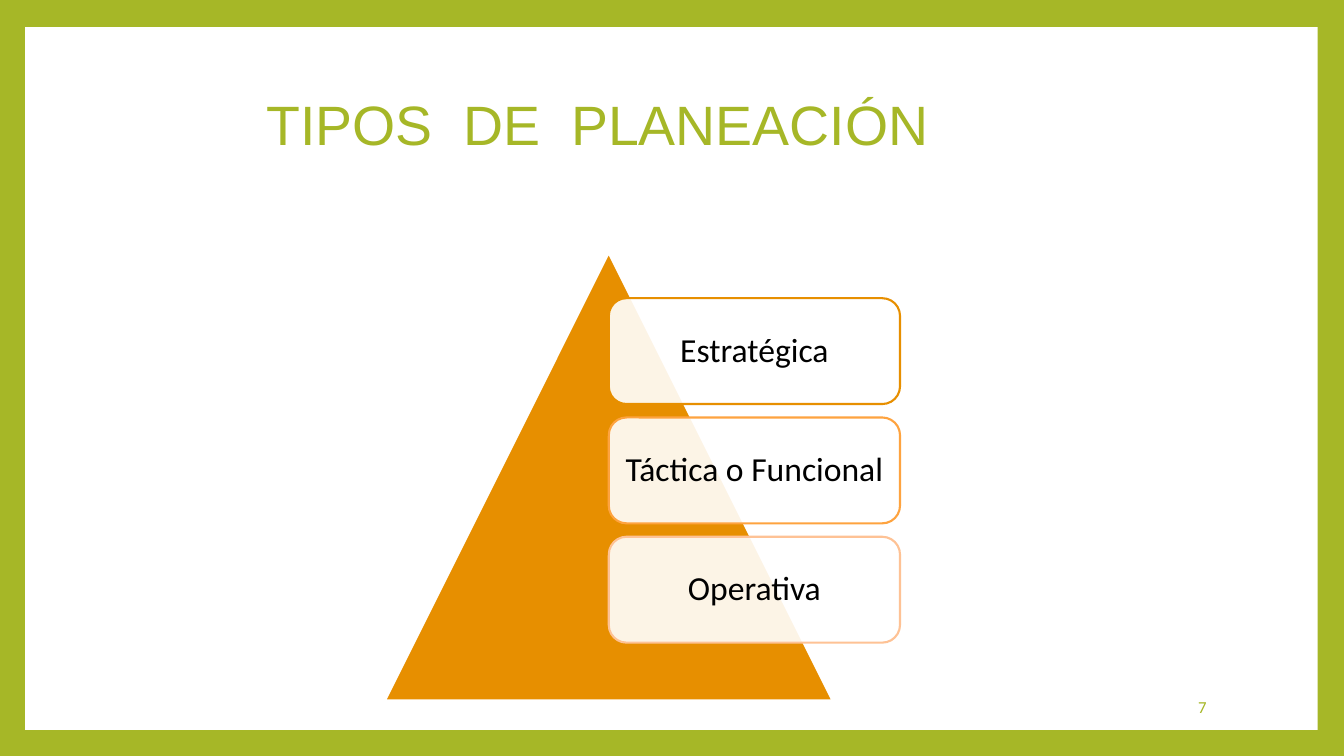
from lxml import etree
from pptx import Presentation
from pptx.dml.color import RGBColor
from pptx.enum import shapes, text
from pptx.oxml import ns
from pptx.util import Pt

COLORS = {
    "green": "A6B727",
    "white": "FFFFFF",
    "black": "000000",
    "orange": "E78F00",
    "amber": "FEA33F",
    "peach": "FEC295",
}
LEVELS = [
    ("Estratégica", "orange"),
    ("Táctica o Funcional", "amber"),
    ("Operativa", "peach"),
]


def rgb(name):
    return RGBColor.from_string(COLORS[name])


def write(holder, words, size, color="black", font="Calibri",
          align=text.PP_ALIGN.CENTER, spacing=1.0, margin=7.2):
    frame = holder.text_frame
    frame.word_wrap = True
    frame.auto_size = text.MSO_AUTO_SIZE.NONE
    frame.vertical_anchor = text.MSO_ANCHOR.MIDDLE
    frame.margin_left = frame.margin_right = Pt(margin)
    frame.margin_top = frame.margin_bottom = Pt(margin / 2)
    line = frame.paragraphs[0]
    line.text = words
    line.alignment = align
    line.line_spacing = spacing
    line.space_before = Pt(0)
    line.font.name = font
    line.font.size = Pt(size)
    line.font.color.rgb = rgb(color)


def add_figure(slide, preset, box, fill, outline=None, opacity=100):
    figure = slide.shapes.add_shape(preset, *map(Pt, box))
    figure.shadow.inherit = False
    figure.fill.solid()
    figure.fill.fore_color.rgb = rgb(fill)
    if opacity < 100:
        tint = figure.fill._xPr.find(".//" + ns.qn("a:srgbClr"))
        etree.SubElement(tint, ns.qn("a:alpha"), val=str(opacity * 1000))
    if outline:
        figure.line.color.rgb = rgb(outline)
        figure.line.width = Pt(1.5)
    else:
        figure.line.fill.background()
    return figure


def add_title(slide, words):
    title = slide.shapes.title
    title.left, title.top, title.width, title.height = map(Pt, (155.5, 71.3, 543, 39))
    write(title, words, 39.6, color="green", font="Arial", spacing=0.9)


def add_pyramid(slide):
    add_figure(slide, shapes.MSO_SHAPE.ISOSCELES_TRIANGLE,
               (275, 180.7, 319.7, 319.7), "orange", "white")
    top, height, step = 213, 75.6, 85.2
    for rank, (level, outline) in enumerate(LEVELS):
        card = add_figure(slide, shapes.MSO_SHAPE.ROUNDED_RECTANGLE,
                          (434.9, top + rank * step, 208, height),
                          "white", outline, opacity=90)
        write(card, level, 24, spacing=0.9, margin=6)


def add_page_number(slide, number):
    page = slide.shapes.add_textbox(*map(Pt, (734.4, 490.3, 134.6, 28.8)))
    write(page, number, 12, color="green", align=text.PP_ALIGN.RIGHT)


def main():
    deck = Presentation()
    deck.slide_width, deck.slide_height = Pt(960), Pt(540)
    slide = deck.slides.add_slide(deck.slide_layouts[5])

    # Green frame around a white panel
    slide.background.fill.solid()
    slide.background.fill.fore_color.rgb = rgb("green")
    panel = add_figure(slide, shapes.MSO_SHAPE.RECTANGLE, (18, 19.3, 923.3, 502), "white")
    slide.shapes.title.element.addprevious(panel.element)

    # Content
    add_title(slide, "TIPOS  DE  PLANEACIÓN")
    add_pyramid(slide)
    add_page_number(slide, "7")

    deck.save("out.pptx")


if __name__ == "__main__":
    main()
